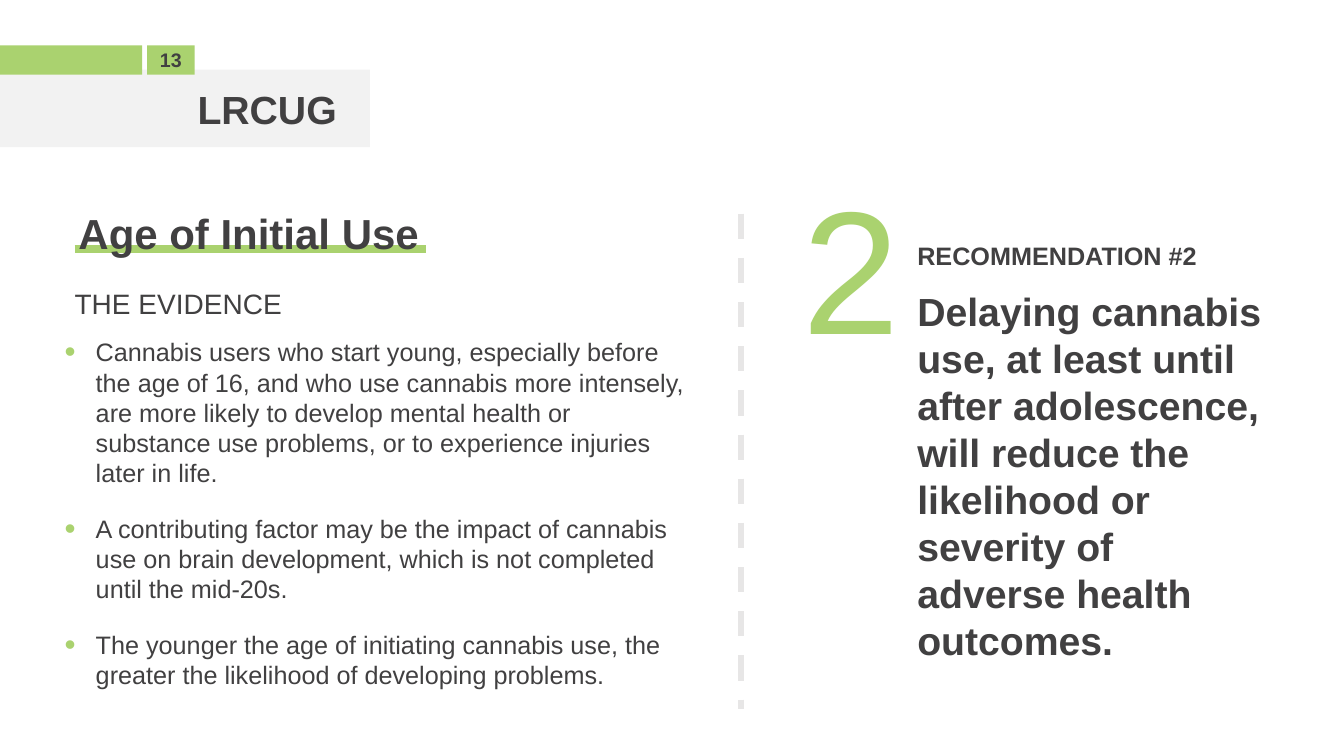
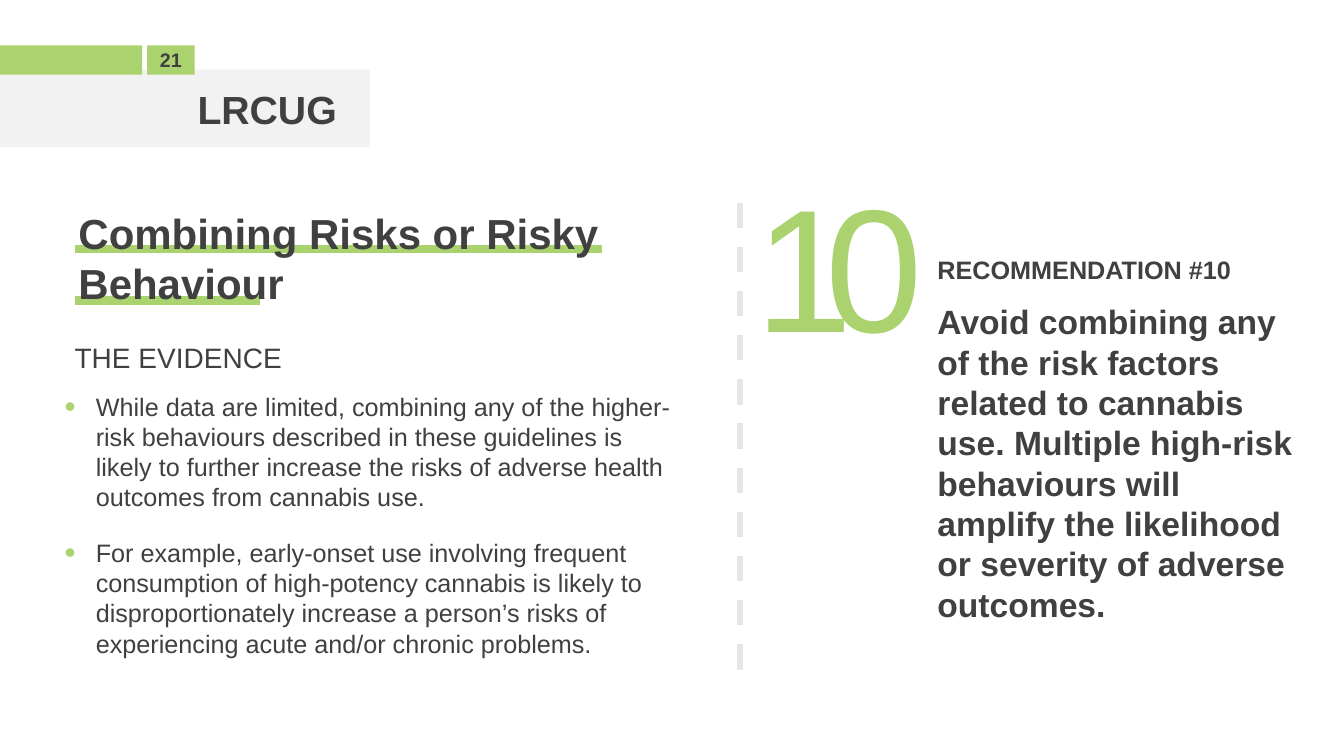
from typing import NamedTuple

from lxml.etree import SubElement
from pptx import Presentation
from pptx.dml.color import RGBColor
from pptx.enum.dml import MSO_LINE_DASH_STYLE as Dash
from pptx.enum.shapes import MSO_CONNECTOR as Connector
from pptx.enum.shapes import MSO_SHAPE as Preset
from pptx.enum.text import MSO_ANCHOR as Anchor
from pptx.enum.text import PP_ALIGN as Align
from pptx.oxml.ns import qn
from pptx.util import Inches, Pt

COLOURS = {"text": "414041", "green": "AAD26F", "band": "F2F2F2", "divider": "E7E6E6"}
FONT = "Arial"
DEFAULT_INSETS = (0.1, 0.05, 0.1, 0.05)
NO_INSETS = (0, 0, 0, 0)
TITLE_PITCH = 0.51
EXTRA_LINE_SHIFT = 0.54


class Box(NamedTuple):
    left: float
    top: float
    width: float
    height: float

    def inner(self, left, top, width, height):
        return Box(self.left + left, self.top + top, width, height)

    def inches(self):
        return [Inches(length) for length in self]


def colour(name):
    return RGBColor.from_string(COLOURS[name])


def add_bullet(paragraph):
    properties = paragraph._p.get_or_add_pPr()
    properties.set("marL", str(Inches(0.31)))
    properties.set("indent", str(Inches(-0.31)))
    bullet_colour = SubElement(properties, qn("a:buClr"))
    SubElement(bullet_colour, qn("a:srgbClr"), val=COLOURS["green"])
    SubElement(properties, qn("a:buSzPct"), val="125000")
    SubElement(properties, qn("a:buFont"), typeface=FONT)
    SubElement(properties, qn("a:buChar"), char="•")


def write(paragraph, text, size=18, bold=False, fill="text", align=Align.LEFT,
          before=0, line_height=None, spacing=0, bullet=False):
    """Fill one paragraph and format it."""
    paragraph.alignment = align
    paragraph.space_before = Pt(before)
    if line_height:
        paragraph.line_spacing = Pt(line_height)
    if bullet:
        add_bullet(paragraph)
    run = paragraph.add_run()
    run.text = text
    run.font.name = FONT
    run.font.size = Pt(size)
    run.font.bold = bold
    run.font.color.rgb = colour(fill)
    if spacing:
        run._r.get_or_add_rPr().set("spc", str(spacing * 100))


def prepare_frame(shape, insets=DEFAULT_INSETS, anchor=Anchor.TOP):
    frame = shape.text_frame
    frame.word_wrap = True
    frame.vertical_anchor = anchor
    (frame.margin_left, frame.margin_top,
     frame.margin_right, frame.margin_bottom) = [Inches(inset) for inset in insets]
    return frame


def add_text(slide, box, paragraphs, insets=DEFAULT_INSETS, anchor=Anchor.TOP):
    """Add a text box; each paragraph is a (text, format) pair."""
    frame = prepare_frame(slide.shapes.add_textbox(*box.inches()), insets, anchor)
    for index, (text, formatting) in enumerate(paragraphs):
        paragraph = frame.add_paragraph() if index else frame.paragraphs[0]
        write(paragraph, text, **formatting)


def add_block(slide, box, fill, text="", insets=NO_INSETS, **formatting):
    block = slide.shapes.add_shape(Preset.RECTANGLE, *box.inches())
    block.shadow.inherit = False
    block.fill.solid()
    block.fill.fore_color.rgb = colour(fill)
    block.line.fill.background()
    if text:
        frame = prepare_frame(block, insets, Anchor.MIDDLE)
        write(frame.paragraphs[0], text, **formatting)


def add_line(slide, start, end, stroke, width, dash=None):
    points = [Inches(length) for length in (*start, *end)]
    line = slide.shapes.add_connector(Connector.STRAIGHT, *points)
    line.line.color.rgb = colour(stroke)
    line.line.width = Pt(width)
    if dash:
        line.line.dash_style = dash
    SubElement(line._element.spPr, qn("a:effectLst"))


def add_header(slide, box, number):
    """Grey band with the section name, and green tabs above it."""
    add_block(slide, box.inner(0, 0.24, box.width, 0.77), "band", "LRCUG",
              insets=(0, 0, 0.33, 0), size=28, bold=True, align=Align.RIGHT)
    add_block(slide, box.inner(0, 0, 1.41, 0.29), "green")
    add_block(slide, box.inner(1.46, 0, 0.47, 0.29), "green", number,
              size=14, bold=True, align=Align.CENTER)


def add_evidence(slide, box, title, underlines, points):
    """Underlined title, subheading and bullets; underlines holds line lengths."""
    for row, length in enumerate(underlines):
        left, top = box.left + 0.1, box.top + 0.46 + row * TITLE_PITCH
        add_line(slide, (left, top), (left + length, top), "green", 6)
    shift = EXTRA_LINE_SHIFT * (len(underlines) - 1)
    add_text(slide, box.inner(0.04, 0, 5.43, 0.61 + shift),
             [(title, {"size": 30, "bold": True})])
    add_text(slide, box.inner(0.1, 0.83 + shift, 5.49, 0.34),
             [("THE EVIDENCE", {"size": 20})], insets=NO_INSETS)
    bullets_top = 1.33 + shift
    add_text(slide, box.inner(0, bullets_top, box.width, box.height - bullets_top),
             [(point, {"before": 18, "bullet": True}) for point in points],
             insets=NO_INSETS)


def add_recommendation(slide, box, number, number_at, words_at, advice, size, spacing=0):
    """Large number and advice, placed relative to the dashed divider."""
    add_text(slide, box.inner(*number_at, 2.2, 2.2),
             [(number, {"size": 125, "fill": "green", "spacing": spacing})])
    add_text(slide, box.inner(*words_at),
             [(f"RECOMMENDATION #{number}", {"bold": True, "line_height": 29}),
              (advice, {"size": size, "bold": True, "before": 12})],
             anchor=Anchor.MIDDLE)
    add_line(slide, (box.left, box.top), (box.left, box.top + box.height),
             "divider", 4.5, Dash.DASH)


SLIDES = [
    {
        "page": "13",
        "evidence": {
            "box": Box(0.64, 2.01, 6.2, 5.02),
            "title": "Age of Initial Use",
            "underlines": [3.49],
            "points": [
                "Cannabis users who start young, especially before the age of 16, "
                "and who use cannabis more intensely, are more likely to develop "
                "mental health or substance use problems, or to experience injuries "
                "later in life.",
                "A contributing factor may be the impact of cannabis use on brain "
                "development, which is not completed until the mid-20s.",
                "The younger the age of initiating cannabis use, the greater the "
                "likelihood of developing problems.",
            ],
        },
        "recommendation": {
            "box": Box(7.35, 2.12, 5.35, 4.91),
            "number": "2",
            "number_at": (0.51, -0.59),
            "words_at": (1.65, -0.26, 3.7, 5.14),
            "size": 28,
            "advice": "Delaying cannabis use, at least until after adolescence, will "
                      "reduce the likelihood or severity of adverse health outcomes.",
        },
    },
    {
        "page": "21",
        "evidence": {
            "box": Box(0.64, 2.01, 6.02, 4.71),
            "title": "Combining Risks or Risky Behaviour",
            "underlines": [5.23, 1.84],
            "points": [
                "While data are limited, combining any of the higher-risk behaviours "
                "described in these guidelines is likely to further increase the "
                "risks of adverse health outcomes from cannabis use.",
                "For example, early-onset use involving frequent consumption of "
                "high-potency cannabis is likely to disproportionately increase a "
                "person’s risks of experiencing acute and/or chronic problems.",
            ],
        },
        "recommendation": {
            "box": Box(7.34, 2.01, 5.63, 4.81),
            "number": "10",
            "number_at": (0.06, -0.5),
            "words_at": (1.86, -0.52, 3.77, 5.63),
            "size": 24,
            "spacing": -20,
            "advice": "Avoid combining any of the risk factors related to cannabis "
                      "use. Multiple high-risk behaviours will amplify the likelihood "
                      "or severity of adverse outcomes.",
        },
    },
]


def main():
    presentation = Presentation()
    presentation.slide_width = Inches(13.33)
    presentation.slide_height = Inches(7.5)
    blank = presentation.slide_layouts[6]
    for content in SLIDES:
        slide = presentation.slides.add_slide(blank)
        add_header(slide, Box(0, 0.45, 3.67, 1.01), content["page"])
        add_evidence(slide, **content["evidence"])
        add_recommendation(slide, **content["recommendation"])
    presentation.save("out.pptx")


if __name__ == "__main__":
    main()
